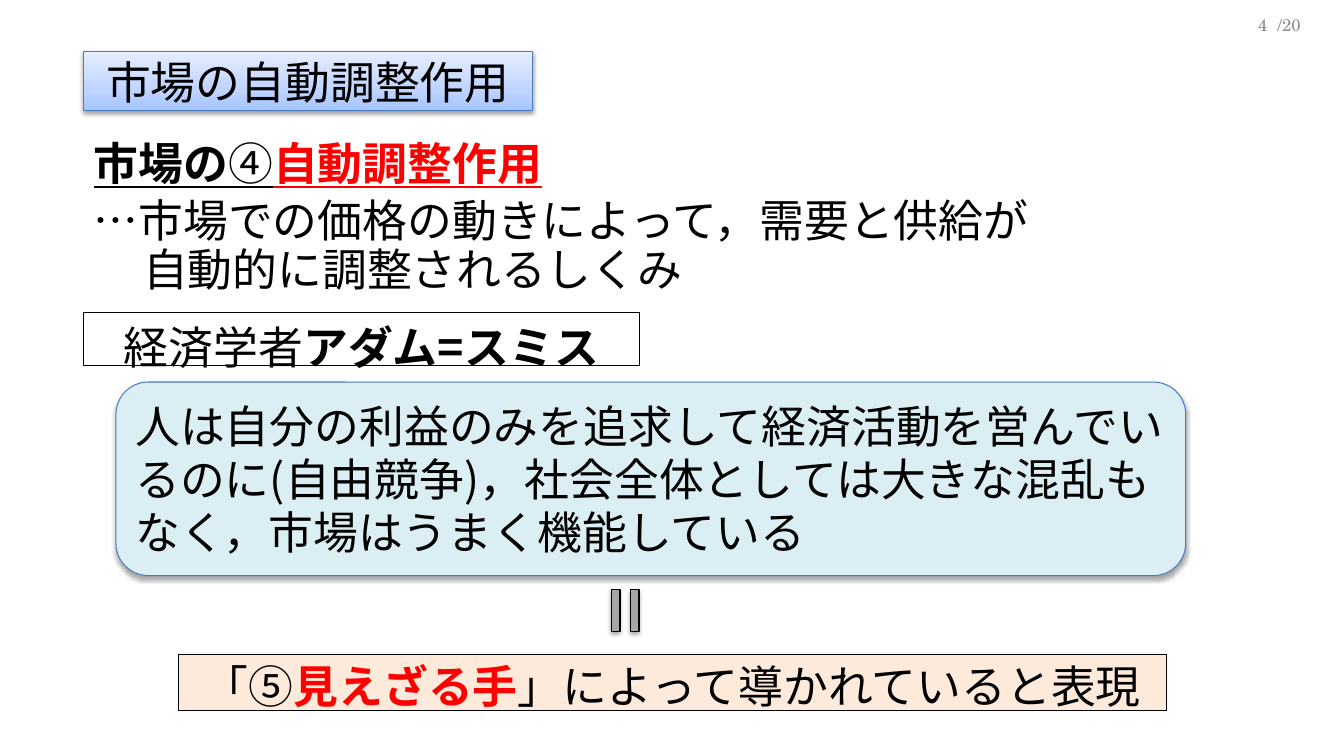
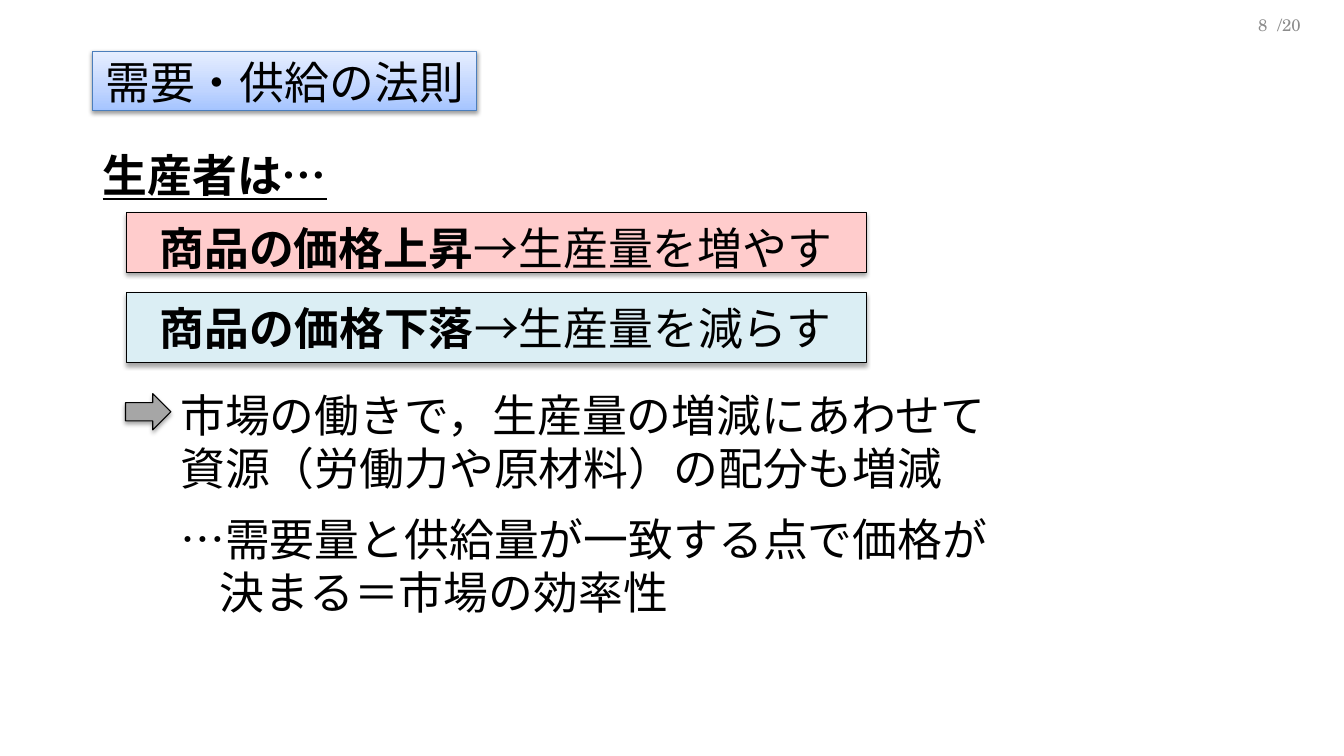
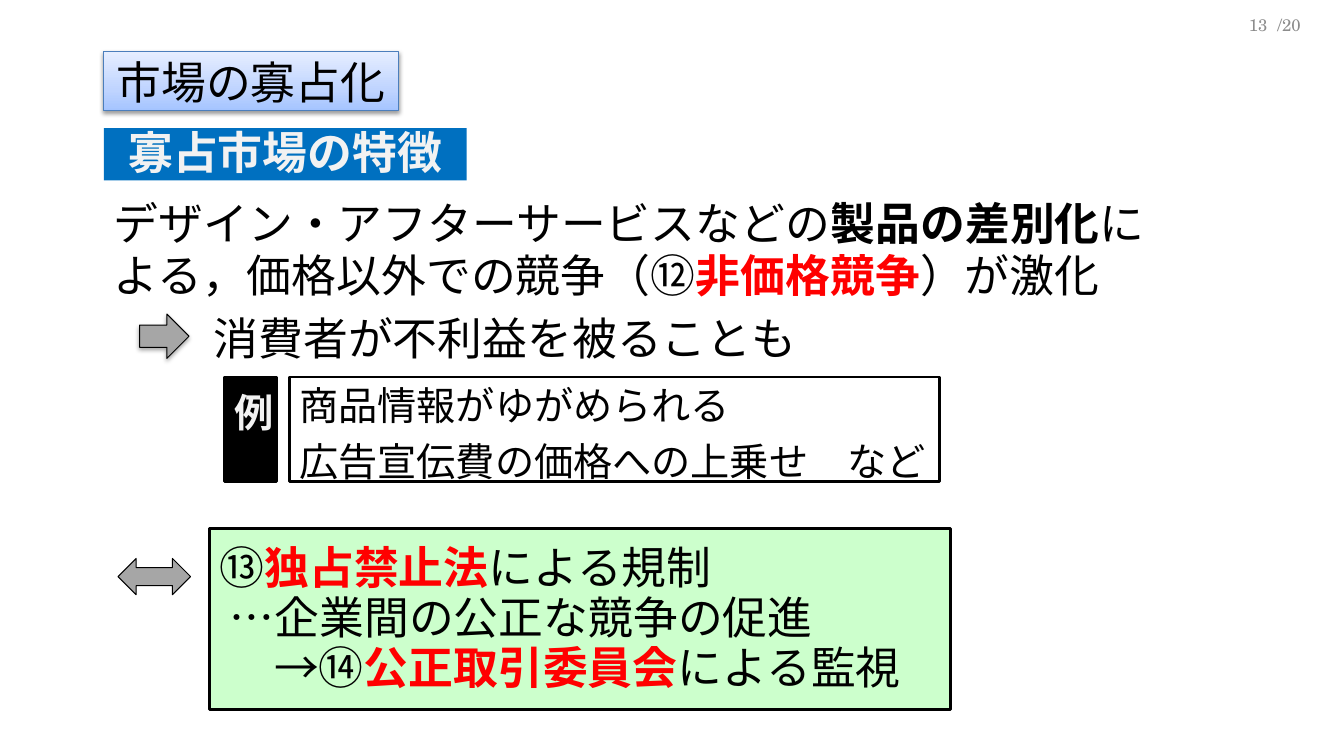
from dataclasses import dataclass
from typing import Any, Optional

from lxml import etree
from pptx import Presentation
from pptx import util as u
from pptx.dml.color import RGBColor
from pptx.enum import lang, shapes, text
from pptx.oxml.ns import qn

# Shared look: 100 px to the inch
PX = 9144
SLIDE_SIZE = (1333, 750)
BODY_FONT = "Noto Sans CJK JP"
NUMBER_FONT = "TeX Gyre Schola"
COLORS = {
    "black": "000000", "white": "FFFFFF", "red": "FF0000", "pale": "F2F2F2",
    "number": "8C8C8C", "gray": "A6A6A6", "edge": "4B7EBC", "blue": "0070C0",
    "sky": "DBEEF4", "peach": "FDEADA", "pink": "FFCCCC", "green": "CCFFCC",
}
TITLE_STOPS = ((0, "A4C4FF"), (35, "BFD4FF"), (100, "E6EEFF"))
TITLE_TOP, TITLE_HEIGHT = 51, 59
PARAGRAPH_GAP = 6
INSETS = (10, 5, 10, 5)
LOW_INSETS = (10, 12, 10, 5)
BAND_INSETS = (10, 20, 10, 5)

LEFT, CENTER, RIGHT = text.PP_ALIGN.LEFT, text.PP_ALIGN.CENTER, text.PP_ALIGN.RIGHT
TOP, MIDDLE = text.MSO_ANCHOR.TOP, text.MSO_ANCHOR.MIDDLE
SHAPE = shapes.MSO_SHAPE


@dataclass
class Run:
    text: str
    bold: bool = False
    color: str = "black"
    underline: bool = False


@dataclass
class Line:
    runs: list[Run]
    spacing: Optional[int] = None
    margin: int = 0
    hanging: int = 0


@dataclass
class Box:
    at: tuple[int, int, int, int]
    lines: list[Line]
    kind: Any = None  # no kind makes a plain text box
    fill: Optional[str] = None
    edge: Optional[str] = None
    edge_width: float = 0.75
    shadow: bool = False
    align: Any = LEFT
    anchor: Any = TOP
    insets: tuple[int, int, int, int] = INSETS
    size: int = 32
    font: str = BODY_FONT
    vertical: bool = False


@dataclass
class Mark:
    at: tuple[int, int, int, int]
    kind: Any
    rotation: int
    shadow: bool = True
    adjustments: tuple[float, ...] = ()


@dataclass
class Page:
    number: int
    title: str
    title_left: int
    title_width: int
    contents: list[Any]


def px(value: int) -> u.Emu:
    return u.Emu(value * PX)


def rgb(name: str) -> RGBColor:
    return RGBColor.from_string(COLORS[name])


def assign(target: Any, values: dict[str, Any]) -> None:
    for name, value in values.items():
        setattr(target, name, value)


def place(shape: Any, at: tuple[int, int, int, int]) -> None:
    assign(shape, dict(zip(("left", "top", "width", "height"), map(px, at))))


def set_shadow(shape: Any, shown: bool, alpha: int = 35, distance: int = 23000) -> None:
    shape.shadow.inherit = False
    if not shown:
        return
    effects = shape._element.spPr.find(qn("a:effectLst"))
    shadow = etree.SubElement(effects, qn("a:outerShdw"), blurRad="40000",
                              dist=str(distance), dir="5400000", rotWithShape="0")
    color = etree.SubElement(shadow, qn("a:srgbClr"), val=COLORS["black"])
    etree.SubElement(color, qn("a:alpha"), val=str(alpha * 1000))


def set_surface(shape: Any, fill: Optional[str], edge: Optional[str], width: float) -> None:
    if fill:
        shape.fill.solid()
        shape.fill.fore_color.rgb = rgb(fill)
    else:
        shape.fill.background()
    if edge:
        shape.line.color.rgb = rgb(edge)
        shape.line.width = u.Pt(width)
    else:
        shape.line.fill.background()


def write(shape: Any, box: Box) -> None:
    frame = shape.text_frame
    margins = ("margin_left", "margin_top", "margin_right", "margin_bottom")
    assign(frame, {"word_wrap": True, "auto_size": text.MSO_AUTO_SIZE.NONE,
                   "vertical_anchor": box.anchor,
                   **dict(zip(margins, map(px, box.insets)))})
    if box.vertical:
        frame._txBody.bodyPr.set("vert", "eaVert")
    for index, line in enumerate(box.lines):
        paragraph = frame.add_paragraph() if index else frame.paragraphs[0]
        values: dict[str, Any] = {"alignment": box.align}
        if line.spacing:
            values["line_spacing"] = u.Pt(line.spacing)
        if index:
            values["space_before"] = u.Pt(PARAGRAPH_GAP)
        assign(paragraph, values)
        if line.margin:
            properties = paragraph._p.get_or_add_pPr()
            properties.set("marL", str(px(line.margin)))
            properties.set("indent", str(px(-line.hanging)))
        for item in line.runs:
            run = paragraph.add_run()
            run.text = item.text
            assign(run.font, {"name": box.font, "size": u.Pt(box.size),
                              "bold": item.bold, "underline": item.underline,
                              "language_id": lang.MSO_LANGUAGE_ID.JAPANESE})
            run.font.color.rgb = rgb(item.color)
            # East Asian glyphs take their own typeface element
            etree.SubElement(run._r.get_or_add_rPr(), qn("a:ea"), typeface=box.font)


def draw_box(slide: Any, box: Box) -> None:
    bounds = map(px, box.at)
    if box.kind is None:
        shape = slide.shapes.add_textbox(*bounds)
    else:
        shape = slide.shapes.add_shape(box.kind, *bounds)
        set_surface(shape, box.fill, box.edge, box.edge_width)
        set_shadow(shape, box.shadow)
    write(shape, box)


def draw_mark(slide: Any, mark: Mark) -> None:
    shape = slide.shapes.add_shape(mark.kind, *map(px, mark.at))
    shape.rotation = mark.rotation
    for index, value in enumerate(mark.adjustments):
        shape.adjustments[index] = value
    set_surface(shape, "gray", "black", 0.75)
    set_shadow(shape, mark.shadow)


def draw_title(slide: Any, page: Page) -> None:
    shape = slide.shapes.title
    at = (page.title_left, TITLE_TOP, page.title_width, TITLE_HEIGHT)
    place(shape, at)
    shape.fill.gradient()
    shape.fill.gradient_angle = 90
    stops = next(shape._element.spPr.iter(qn("a:gsLst")))
    for stop in list(stops):
        stops.remove(stop)
    for position, color in TITLE_STOPS:
        stop = etree.SubElement(stops, qn("a:gs"), pos=str(position * 1000))
        etree.SubElement(stop, qn("a:srgbClr"), val=color)
    shape.line.color.rgb = rgb("edge")
    shape.line.width = u.Pt(0.75)
    set_shadow(shape, True, alpha=38, distance=20000)
    write(shape, Box(at, [Line([Run(page.title)])], align=CENTER, anchor=MIDDLE))


def draw_page_number(slide: Any, number: int) -> None:
    for left, label in ((956, str(number)), (989, "/20")):
        draw_box(slide, Box((left, 11, 311, 27), [Line([Run(label, color="number")])],
                            align=RIGHT, anchor=MIDDLE, size=12, font=NUMBER_FONT))


def price_band(top: int, height: int, fill: str, cause: str, effect: str) -> Box:
    return Box((125, top, 734, height), [Line([Run(cause, True), Run(effect)], 30)],
               SHAPE.RECTANGLE, fill, "black", 0.5, True, CENTER, insets=BAND_INSETS)


# Market self-adjustment
ADJUSTMENT = Page(4, "市場の自動調整作用", 83, 445, [
    Box((83, 134, 982, 167), [
        Line([Run("市場の", True, underline=True), Run("④", underline=True),
              Run("自動調整作用", True, "red", True)], 35),
        Line([Run("…市場での価格の動きによって，需要と供給が自動的に調整されるしくみ")],
             35, 49, 49),
    ]),
    Box((83, 310, 551, 53), [Line([Run("経済学者"), Run("アダム=スミス", True)], 35)],
        SHAPE.RECTANGLE, "white", "black", align=CENTER, insets=(0, 12, 0, 0)),
    Mark((592, 585, 56, 41), SHAPE.MATH_EQUAL, 90, adjustments=(0.21, 0.25)),
    Box((177, 649, 980, 56),
        [Line([Run("「⑤"), Run("見えざる手", True, "red"),
               Run("」によって導かれていると表現")])],
        SHAPE.RECTANGLE, "peach", "black", align=CENTER),
    Box((115, 379, 1061, 192),
        [Line([Run("人は自分の利益のみを追求して経済活動を営んでいるのに(自由競争)，"
                   "社会全体としては大きな混乱もなく，市場はうまく機能している")], 38)],
        SHAPE.ROUNDED_RECTANGLE, "sky", "edge", shadow=True, anchor=MIDDLE),
])

# Law of supply and demand
SUPPLY_DEMAND = Page(8, "需要・供給の法則", 92, 381, [
    Box((92, 153, 306, 49), [Line([Run("生産者は…", True, underline=True)], 30)]),
    price_band(290, 70, "sky", "商品の価格下落", "→生産量を減らす"),
    price_band(211, 59, "pink", "商品の価格上昇", "→生産量を増やす"),
    Mark((129, 386, 36, 45), SHAPE.DOWN_ARROW, 270),
    Box((169, 380, 845, 121),
        [Line([Run("市場の働きで，生産量の増減にあわせて資源（労働力や原材料）の配分も増減")], 38)]),
    Box((169, 503, 845, 97),
        [Line([Run("…需要量と供給量が一致する点で価格が決まる＝市場の効率性")], 38, 39, 39)]),
])

# Oligopoly
OLIGOPOLY = Page(13, "市場の寡占化", 103, 292, [
    Box((103, 127, 360, 52), [Line([Run("寡占市場の特徴", True, "pale")], 30)],
        SHAPE.RECTANGLE, "blue", align=CENTER, anchor=MIDDLE, insets=LOW_INSETS),
    Box((103, 191, 1059, 110),
        [Line([Run("デザイン・アフターサービスなどの"), Run("製品の差別化", True),
               Run("による，価格以外での競争（⑫"), Run("非価格競争", True, "red"),
               Run("）が激化")], 37)]),
    Mark((141, 309, 44, 49), SHAPE.DOWN_ARROW, 270),
    Box((202, 315, 752, 60), [Line([Run("消費者が不利益を被ることも")], 30)]),
    Box((223, 374, 51, 104), [Line([Run("例", True, "pale")], 30)],
        SHAPE.RECTANGLE, "black", "black", 2, align=CENTER, anchor=MIDDLE,
        insets=(8, 16, 8, 8), size=28, vertical=True),
    Box((287, 374, 645, 104),
        [Line([Run("商品情報がゆがめられる")], 34),
         Line([Run("広告宣伝費の価格への上乗せ　など")], 34)],
        SHAPE.RECTANGLE, "white", "black", 2, anchor=MIDDLE, insets=LOW_INSETS, size=28),
    Mark((117, 554, 72, 36), SHAPE.LEFT_RIGHT_ARROW, 180, shadow=False),
    Box((208, 524, 735, 180),
        [Line([Run("⑬"), Run("独占禁止法", True, "red"), Run("による規制")], 30),
         Line([Run("…企業間の公正な競争の促進")], 30, 10),
         Line([Run("→⑭"), Run("公正取引委員会", True, "red"), Run("による監視")], 30, 54)],
        SHAPE.RECTANGLE, "green", "black", 2, anchor=MIDDLE, insets=LOW_INSETS),
])


def main() -> None:
    presentation = Presentation()
    presentation.slide_width, presentation.slide_height = map(px, SLIDE_SIZE)
    title_only = presentation.slide_layouts[5]
    for page in (ADJUSTMENT, SUPPLY_DEMAND, OLIGOPOLY):
        slide = presentation.slides.add_slide(title_only)
        draw_page_number(slide, page.number)
        draw_title(slide, page)
        for item in page.contents:
            if isinstance(item, Mark):
                draw_mark(slide, item)
            else:
                draw_box(slide, item)
    presentation.save("out.pptx")


if __name__ == "__main__":
    main()
